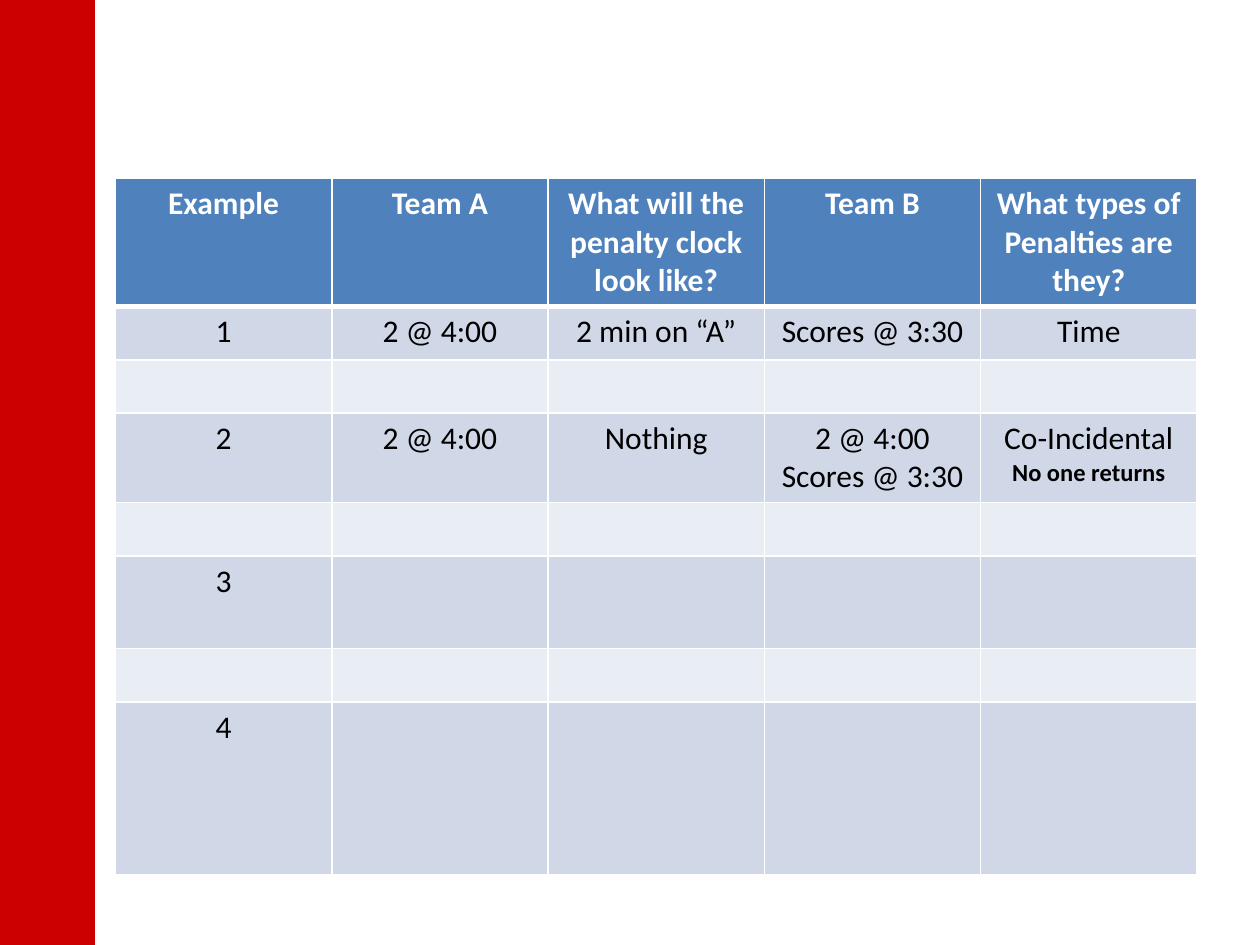
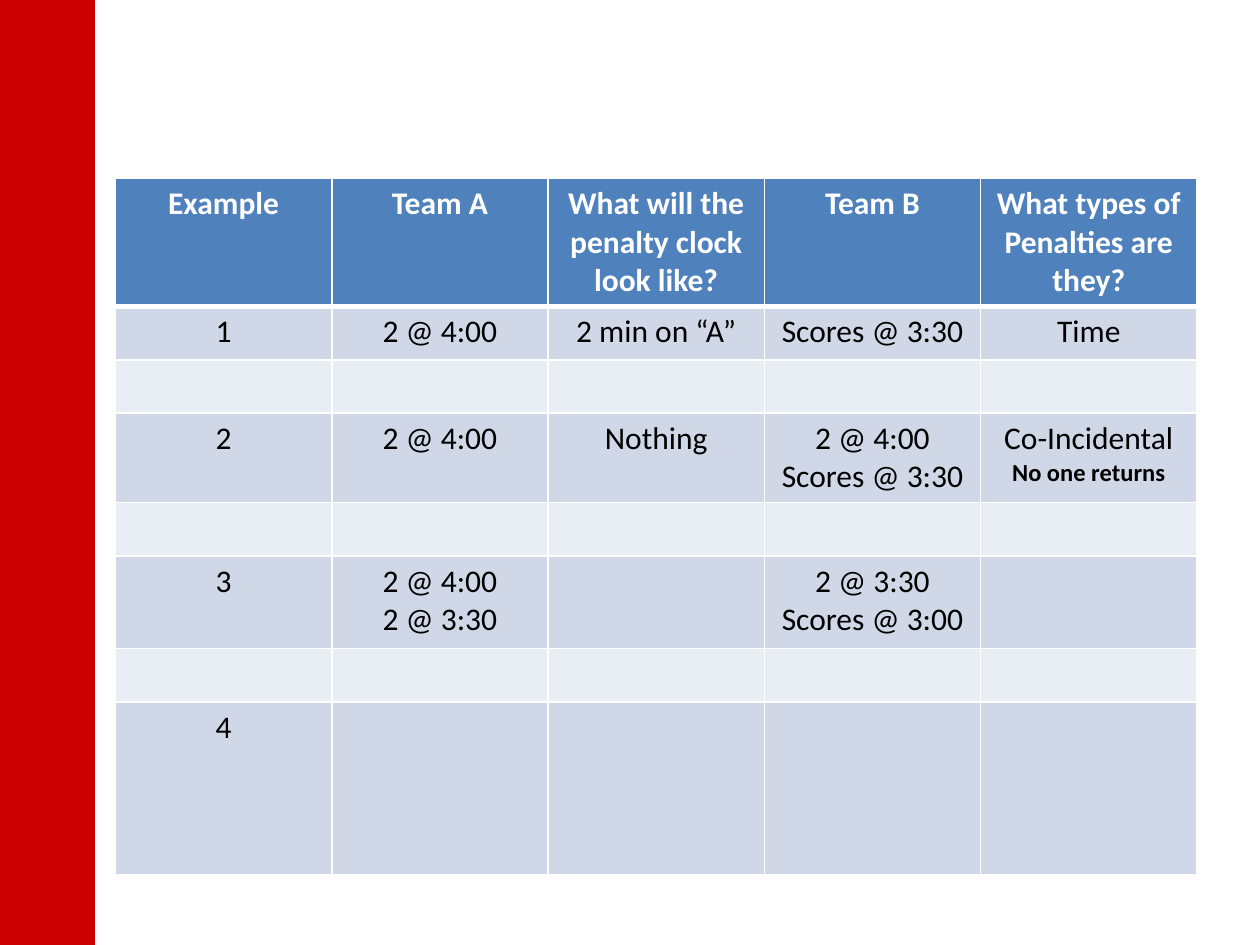
"""Build two slides of penalty clock examples."""
from lxml.etree import SubElement
from pptx import Presentation
from pptx.dml.color import RGBColor as RGB
from pptx.enum.shapes import MSO_SHAPE as SHAPE
from pptx.enum.text import PP_ALIGN as ALIGN
from pptx.oxml.ns import qn
from pptx.util import Pt

COLORS = {
    "band": "CC0000",
    "header": "4F81BD",
    "odd": "D0D8E8",
    "even": "E9EDF4",
    "white": "FFFFFF",
    "black": "000000",
}
FONT = "Calibri"
SLIDE_W, SLIDE_H = 720, 540
BAND_BOX = (0, 0, 54, SLIDE_H)
TABLE_BOX = (66, 102, 618, 397)
ROW_HEIGHTS = (72.5, 30.5, 30.5, 51, 30.5, 53, 30.5, 98.5)
HEADERS = (
    "Example",
    "Team A",
    "What will the penalty clock look like?",
    "Team B",
    "What types of Penalties are they?",
)
NOTE = "No one returns"
TIME = ("1", "2 @ 4:00", "2 min on “A”", "Scores @ 3:30", "Time")
COINCIDENTAL = ("2", "2 @ 4:00", "Nothing", "2 @ 4:00\nScores @ 3:30", f"Co-Incidental\n{NOTE}")
THIRD = ("3", "2 @ 4:00\n2 @ 3:30", "", "2 @ 3:30\nScores @ 3:00", "")
SLIDES = (
    (TIME, COINCIDENTAL, ("3",), ("4",)),
    (TIME, COINCIDENTAL, THIRD, ("4",)),
)


def rgb(name):
    """Return the named palette colour."""
    return RGB.from_string(COLORS[name])


def add_band(slide, box):
    """Draw the red side band."""
    sp = slide.shapes.add_shape(SHAPE.RECTANGLE, *map(Pt, box))
    sp.shadow.inherit = False
    sp.fill.solid()
    sp.fill.fore_color.rgb = rgb("band")
    sp.line.color.rgb = rgb("band")
    sp.line.width = Pt(0.75)


def set_borders(cell, top, bottom):
    """Give a cell white borders, with top and bottom widths in points."""
    tc_pr = cell._tc.get_or_add_tcPr()
    for side, width in (("L", 1), ("R", 1), ("T", top), ("B", bottom)):
        ln = SubElement(tc_pr, qn(f"a:ln{side}"), w=str(Pt(width)))
        fill = SubElement(ln, qn("a:solidFill"))
        SubElement(fill, qn("a:srgbClr"), val=COLORS["white"])


def write_cell(cell, text, header):
    """Write centred lines, with the note smaller and bold."""
    tf = cell.text_frame
    for i, line in enumerate(text.split("\n")):
        p = tf.paragraphs[0] if i == 0 else tf.add_paragraph()
        p.alignment = ALIGN.CENTER
        r = p.add_run()
        r.text = line
        r.font.name = FONT
        r.font.size = Pt(14 if line == NOTE else 18)
        r.font.bold = header or line == NOTE
        r.font.color.rgb = rgb("white" if header else "black")


def add_penalty_table(slide, box, examples):
    """Draw the table, with an empty row between examples."""
    rows = [HEADERS]
    for example in examples:
        rows += [example, ()]
    rows.pop()
    n_cols = len(HEADERS)
    table = slide.shapes.add_table(len(rows), n_cols, *map(Pt, box)).table
    for col in table.columns:
        col.width = Pt(box[2] / n_cols)
    for i, (texts, height) in enumerate(zip(rows, ROW_HEIGHTS)):
        table.rows[i].height = Pt(height)
        color = "header" if i == 0 else "odd" if i % 2 else "even"
        for j in range(n_cols):
            cell = table.cell(i, j)
            set_borders(cell, 3 if i == 1 else 1, 3 if i == 0 else 1)
            cell.fill.solid()
            cell.fill.fore_color.rgb = rgb(color)
            if j < len(texts) and texts[j]:
                write_cell(cell, texts[j], i == 0)


def main():
    """Build and save the presentation."""
    prs = Presentation()
    prs.slide_width, prs.slide_height = Pt(SLIDE_W), Pt(SLIDE_H)
    for examples in SLIDES:
        slide = prs.slides.add_slide(prs.slide_layouts[6])
        add_band(slide, BAND_BOX)
        add_penalty_table(slide, TABLE_BOX, examples)
    prs.save("out.pptx")


if __name__ == "__main__":
    main()
